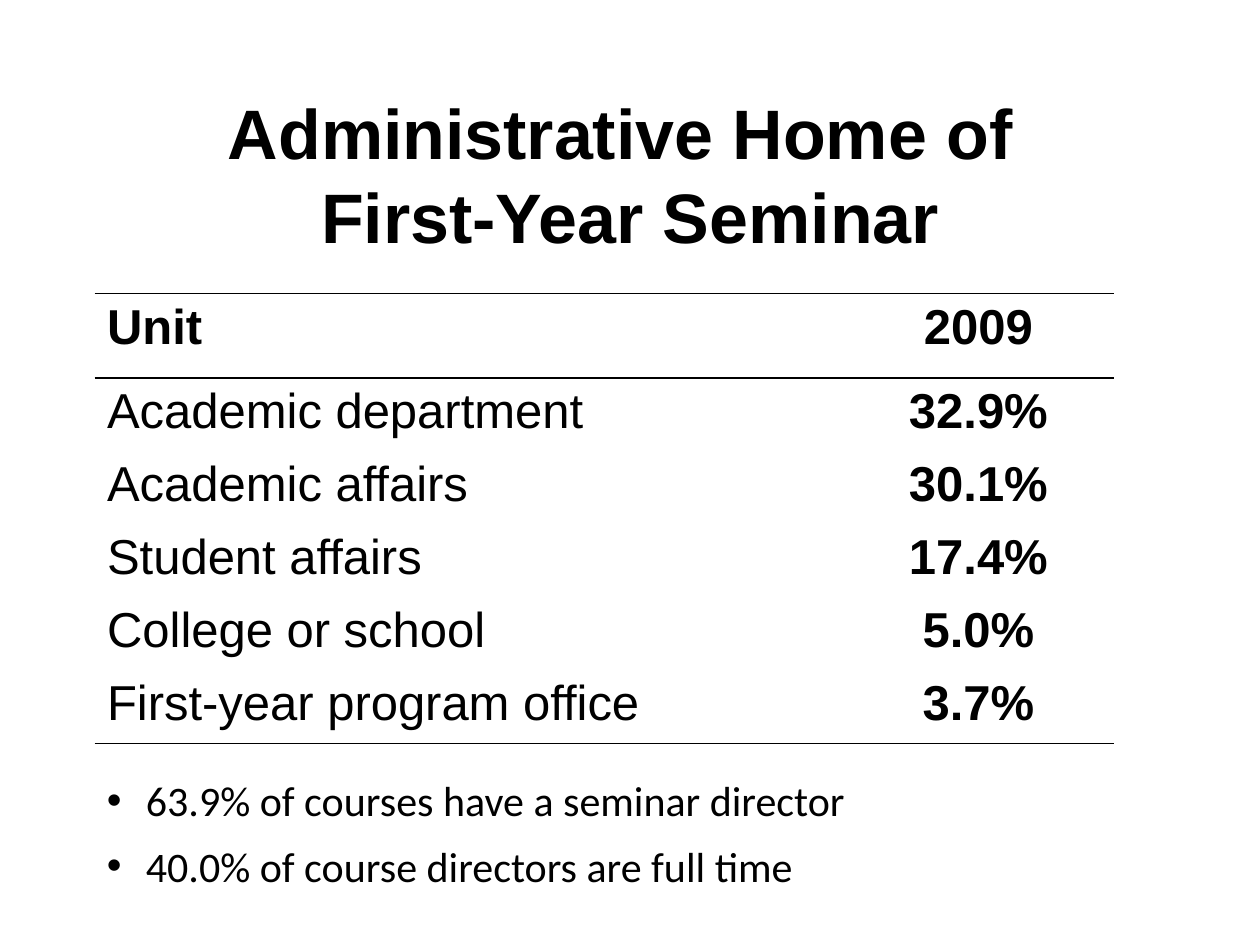
from lxml import etree
from pptx import Presentation
from pptx import util as u
from pptx.dml.color import RGBColor
from pptx.enum import text
from pptx.oxml import ns

COLORS = {"ink": "000000"}
ROWS = [
    ("Unit", "2009"),
    ("Academic department", "32.9%"),
    ("Academic affairs", "30.1%"),
    ("Student affairs", "17.4%"),
    ("College or school", "5.0%"),
    ("First-year program office", "3.7%"),
]
BULLETS = [
    "63.9% of courses have a seminar director",
    "40.0% of course directors are full time",
]


def place(shape, left, top, width, height):
    """Set a shape's position and size in inches."""
    shape.left, shape.top = u.Inches(left), u.Inches(top)
    shape.width, shape.height = u.Inches(width), u.Inches(height)


def add_run(paragraph, words, size, name="Arial", bold=False):
    """Add one formatted run to a paragraph."""
    run = paragraph.add_run()
    run.text = words
    font = run.font
    font.name, font.size, font.bold = name, u.Pt(size), bold
    font.color.rgb = RGBColor.from_string(COLORS["ink"])


def add_title(slide, lines):
    """Fill the title placeholder with centred bold lines."""
    title = slide.shapes.title
    place(title, 0.75, 0.75, 8.5, 1.25)
    paragraph = title.text_frame.paragraphs[0]
    paragraph.alignment = text.PP_ALIGN.CENTER
    for index, line in enumerate(lines):
        if index:
            paragraph.add_line_break()
        add_run(paragraph, line, 40, bold=True)


def set_borders(cell, ruled):
    """Draw the ruled edges of a cell and clear the others."""
    properties = cell._tc.get_or_add_tcPr()
    for index, edge in enumerate(("lnL", "lnR", "lnT", "lnB")):
        line = etree.Element(ns.qn(f"a:{edge}"), w=str(u.Pt(1)))
        if edge in ruled:
            fill = etree.SubElement(line, ns.qn("a:solidFill"))
            etree.SubElement(fill, ns.qn("a:srgbClr"), val=COLORS["ink"])
        else:
            etree.SubElement(line, ns.qn("a:noFill"))
        properties.insert(index, line)


def add_unit_table(slide):
    """Add the table of units with rules around the header and at the end."""
    frame = slide.shapes.add_table(
        len(ROWS), 2, u.Inches(0.75), u.Inches(2.33), u.Inches(8.09), u.Inches(3.57)
    )
    table = frame.table
    table.first_row = table.horz_banding = False
    for column, width in zip(table.columns, (5.94, 2.15)):
        column.width = u.Inches(width)
    rules = {0: ("lnT", "lnB"), 1: ("lnT",), len(ROWS) - 1: ("lnB",)}
    for row, values in enumerate(ROWS):
        table.rows[row].height = u.Inches(0.58 if row else 0.67)
        for column, value in enumerate(values):
            cell = table.cell(row, column)
            cell.fill.background()
            set_borders(cell, rules.get(row, ()))
            paragraph = cell.text_frame.paragraphs[0]
            if column:
                paragraph.alignment = text.PP_ALIGN.CENTER
            add_run(paragraph, value, 28, bold=row == 0 or column == 1)


def add_bullets(slide):
    """Add the bulleted notes below the table."""
    box = slide.shapes.add_textbox(0, 0, 0, 0)
    place(box, 0.75, 6.1, 8.33, 1.04)
    frame = box.text_frame
    frame.word_wrap = True
    for index, words in enumerate(BULLETS):
        paragraph = frame.add_paragraph() if index else frame.paragraphs[0]
        properties = paragraph._p.get_or_add_pPr()
        properties.set("marL", str(u.Inches(0.31)))
        properties.set("indent", str(-u.Inches(0.31)))
        etree.SubElement(properties, ns.qn("a:buFont"), typeface="Arial")
        etree.SubElement(properties, ns.qn("a:buChar"), char="•")
        if index:
            paragraph.space_before = u.Pt(8.5)
        add_run(paragraph, words, 24, "Calibri")


def main():
    """Build and save the slide."""
    presentation = Presentation()
    presentation.slide_width = u.Inches(10)
    presentation.slide_height = u.Inches(7.5)
    slide = presentation.slides.add_slide(presentation.slide_layouts[5])
    add_title(slide, ("Administrative Home of ", "First-Year Seminar"))
    add_unit_table(slide)
    add_bullets(slide)
    presentation.save("out.pptx")


if __name__ == "__main__":
    main()
